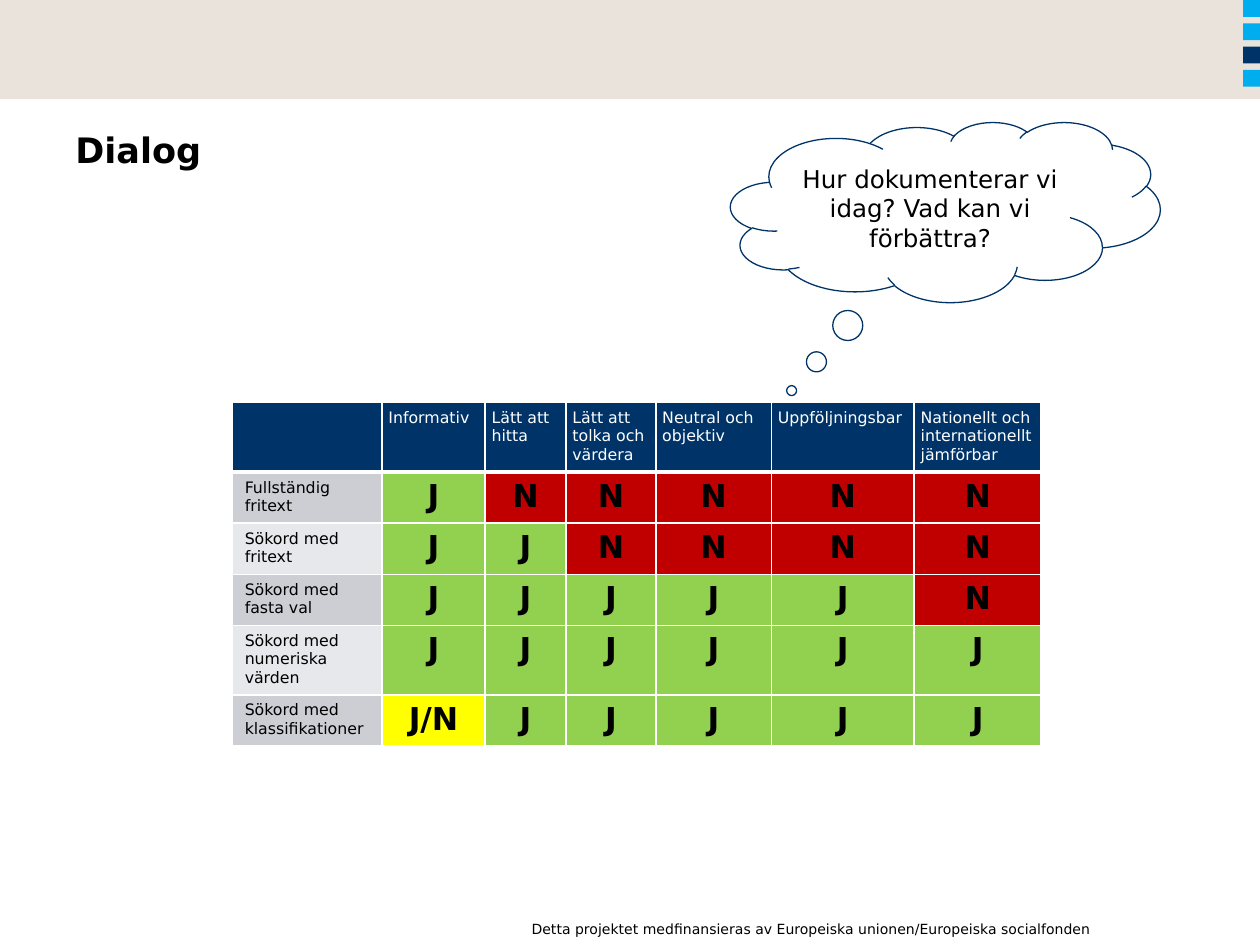
"""Build a slide that grades ways of documenting, with a thought bubble."""
from dataclasses import dataclass

from lxml import etree
from pptx import Presentation
from pptx.dml.color import RGBColor
from pptx.enum.shapes import MSO_SHAPE
from pptx.enum.text import MSO_ANCHOR, PP_ALIGN
from pptx.oxml.ns import qn
from pptx.util import Cm, Pt

RECTANGLE, CLOUD = MSO_SHAPE.RECTANGLE, MSO_SHAPE.CLOUD_CALLOUT
LEFT, CENTER, RIGHT = PP_ALIGN.LEFT, PP_ALIGN.CENTER, PP_ALIGN.RIGHT
TOP, MIDDLE = MSO_ANCHOR.TOP, MSO_ANCHOR.MIDDLE


@dataclass(frozen=True)
class Theme:
    font: str = "DejaVu Sans"
    black: str = "000000"
    white: str = "FFFFFF"
    navy: str = "003468"
    cyan: str = "00AEEF"
    sand: str = "E9E3DC"
    dark_band: str = "CCCED4"
    light_band: str = "E7E8EB"
    yes: str = "92D050"
    no: str = "C00000"
    partly: str = "FFFF00"
    title_size: int = 20
    grade_size: int = 18
    bubble_size: int = 14
    table_size: int = 9
    footer_size: int = 8
    thin_line: float = 1
    thick_line: float = 3
    bubble_line: float = 0.75


@dataclass(frozen=True)
class Frame:
    left: float
    top: float
    width: float
    height: float

    def lengths(self) -> list:
        return [Cm(value) for value in (self.left, self.top, self.width, self.height)]


@dataclass(frozen=True)
class TextStyle:
    size: int
    color: str
    bold: bool = False
    align: int = LEFT
    anchor: int = TOP


@dataclass(frozen=True)
class Method:
    label: str
    grades: tuple


THEME = Theme()
HEADINGS = (
    "",
    "Informativ",
    "Lätt att hitta",
    "Lätt att tolka och värdera",
    "Neutral och objektiv",
    "Uppföljningsbar",
    "Nationellt och internationellt jämförbar",
)
METHODS = (
    Method("Fullständig fritext", ("J", "N", "N", "N", "N", "N")),
    Method("Sökord med fritext", ("J", "J", "N", "N", "N", "N")),
    Method("Sökord med fasta val", ("J", "J", "J", "J", "J", "N")),
    Method("Sökord med numeriska värden", ("J", "J", "J", "J", "J", "J")),
    Method("Sökord med klassifikationer", ("J/N", "J", "J", "J", "J", "J")),
)
GRADE_FILLS = {"J": THEME.yes, "N": THEME.no, "J/N": THEME.partly}
COLUMN_WIDTHS = (3.02, 2.08, 1.63, 1.81, 2.33, 2.88, 2.56)
ROW_HEIGHTS = (1.35, 1.03, 1.03, 1.03, 1.37, 1.03)
TABLE_LEFT, TABLE_TOP = 4.68, 8.11
SQUARE_SIZE, SQUARE_PITCH = 0.34, 0.47
SQUARE_COLORS = (THEME.cyan, THEME.cyan, THEME.navy, THEME.cyan)


def write_text(text_frame, text: str, style: TextStyle) -> None:
    text_frame.word_wrap = True
    text_frame.vertical_anchor = style.anchor
    para = text_frame.paragraphs[0]
    para.alignment = style.align
    span = para.add_run()
    span.text = text
    formats = {"name": THEME.font, "size": Pt(style.size), "bold": style.bold}
    for name, value in formats.items():
        setattr(span.font, name, value)
    span.font.color.rgb = RGBColor.from_string(style.color)


def add_text(page, frame: Frame, text: str, style: TextStyle) -> None:
    box = page.shapes.add_textbox(*frame.lengths())
    write_text(box.text_frame, text, style)


def add_filled(page, kind: int, frame: Frame, color: str):
    shape = page.shapes.add_shape(kind, *frame.lengths())
    shape.shadow.inherit = False
    shape.fill.solid()
    shape.fill.fore_color.rgb = RGBColor.from_string(color)
    shape.line.fill.background()
    return shape


def add_border(cell, side: str, width: float) -> None:
    properties = cell._tc.get_or_add_tcPr()
    line = etree.SubElement(properties, qn(f"a:ln{side}"), w=str(Pt(width)))
    fill = etree.SubElement(line, qn("a:solidFill"))
    etree.SubElement(fill, qn("a:srgbClr"), val=THEME.white)


def fill_cell(cell, text: str, style: TextStyle, color: str, widths: dict) -> None:
    for side in "LRTB":
        add_border(cell, side, widths.get(side, THEME.thin_line))
    cell.fill.solid()
    cell.fill.fore_color.rgb = RGBColor.from_string(color)
    if text:
        write_text(cell.text_frame, text, style)


def add_grades(page) -> None:
    frame = Frame(TABLE_LEFT, TABLE_TOP, sum(COLUMN_WIDTHS), sum(ROW_HEIGHTS))
    graphic = page.shapes.add_table(len(ROW_HEIGHTS), len(COLUMN_WIDTHS), *frame.lengths())
    table = graphic.table
    table.horz_banding = False
    for column, width in zip(table.columns, COLUMN_WIDTHS):
        column.width = Cm(width)
    for row, height in zip(table.rows, ROW_HEIGHTS):
        row.height = Cm(height)

    heading_style = TextStyle(THEME.table_size, THEME.white)
    label_style = TextStyle(THEME.table_size, THEME.black)
    grade_style = TextStyle(THEME.grade_size, THEME.black, bold=True, align=CENTER)
    thick = THEME.thick_line
    for index, heading in enumerate(HEADINGS):
        cell = table.cell(0, index)
        for side in ("left", "right", "top", "bottom"):
            setattr(cell, f"margin_{side}", Cm(0.13))
        fill_cell(cell, heading, heading_style, THEME.navy, {"B": thick})
    for number, method in enumerate(METHODS, start=1):
        widths = {"T": thick} if number == 1 else {}
        band = THEME.dark_band if number % 2 else THEME.light_band
        fill_cell(table.cell(number, 0), method.label, label_style, band, widths)
        for index, grade in enumerate(method.grades, start=1):
            cell = table.cell(number, index)
            fill_cell(cell, grade, grade_style, GRADE_FILLS[grade], widths)


def add_bubble(page) -> None:
    bubble = add_filled(page, CLOUD, Frame(14.73, 2.46, 8.66, 3.63), THEME.white)
    bubble.adjustments[0] = -0.358
    bubble.adjustments[1] = 0.992
    bubble.line.color.rgb = RGBColor.from_string(THEME.navy)
    bubble.line.width = Pt(THEME.bubble_line)
    style = TextStyle(THEME.bubble_size, THEME.black, align=CENTER, anchor=MIDDLE)
    write_text(bubble.text_frame, "Hur dokumenterar vi idag? Vad kan vi förbättra?", style)


def main() -> None:
    deck = Presentation()
    deck.slide_width, deck.slide_height = Cm(25.4), Cm(19.05)
    page = deck.slides.add_slide(deck.slide_layouts[6])

    add_filled(page, RECTANGLE, Frame(0, 0, 25.4, 2), THEME.sand)
    for index, color in enumerate(SQUARE_COLORS):
        square = Frame(25.4 - SQUARE_SIZE, index * SQUARE_PITCH, SQUARE_SIZE, SQUARE_SIZE)
        add_filled(page, RECTANGLE, square, color)
    add_text(
        page,
        Frame(10.19, 18.44, 12.06, 0.6),
        "Detta projektet medfinansieras av Europeiska unionen/Europeiska socialfonden",
        TextStyle(THEME.footer_size, THEME.black, align=RIGHT),
    )
    title_style = TextStyle(THEME.title_size, THEME.black, bold=True)
    add_text(page, Frame(1.27, 2.46, 21.39, 3.18), "Dialog", title_style)
    add_grades(page)
    add_bubble(page)
    deck.save("out.pptx")


if __name__ == "__main__":
    main()
